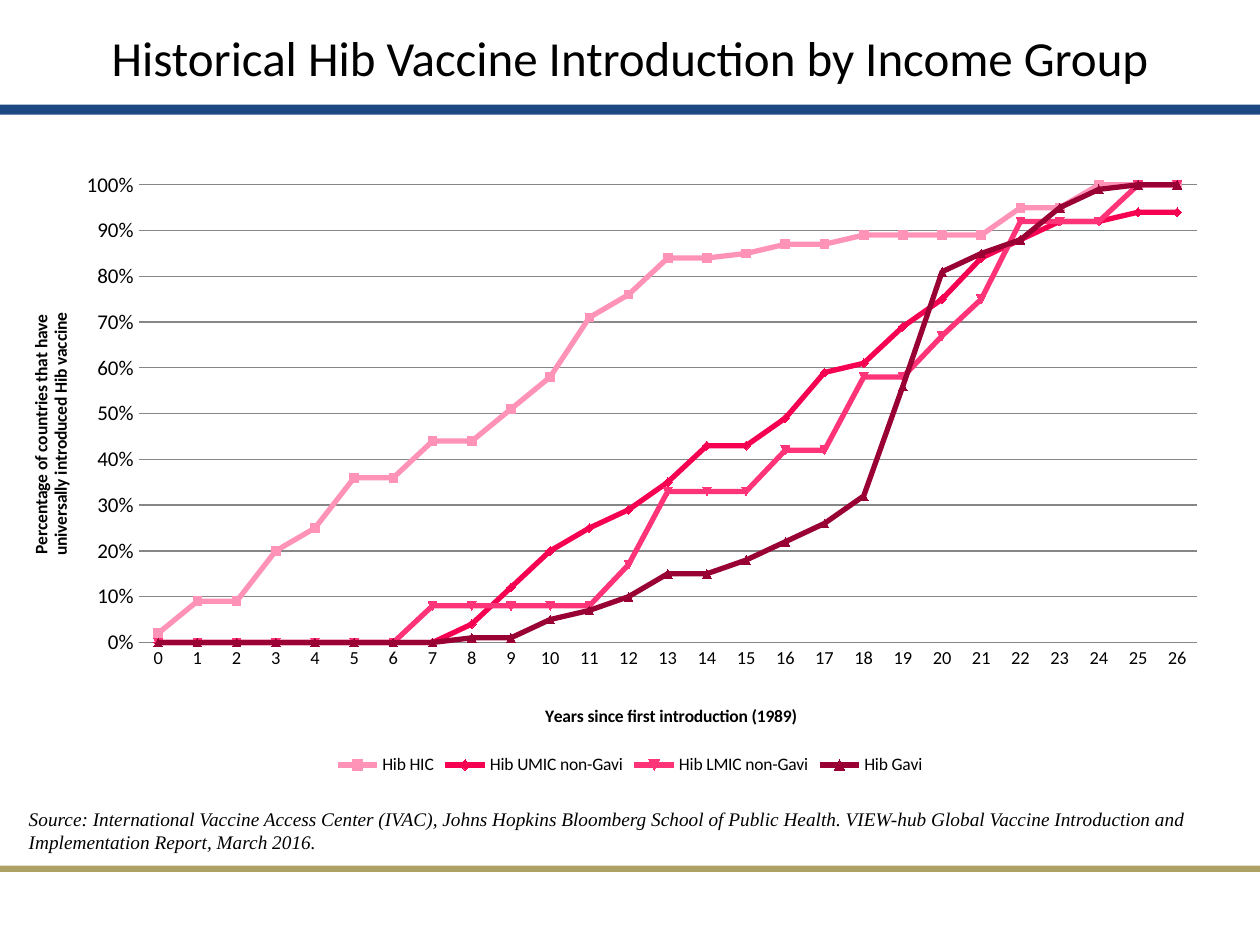
from lxml import etree
from pptx import Presentation
from pptx.chart.data import CategoryChartData
from pptx.dml.color import RGBColor
from pptx.enum.chart import XL_CHART_TYPE, XL_LEGEND_POSITION, XL_MARKER_STYLE, XL_TICK_MARK
from pptx.enum.shapes import MSO_SHAPE
from pptx.enum.text import MSO_ANCHOR, PP_ALIGN
from pptx.oxml.ns import qn
from pptx.util import Inches, Pt

LINE_MARKERS = XL_CHART_TYPE.LINE_MARKERS
LEGEND_BOTTOM = XL_LEGEND_POSITION.BOTTOM
AUTO_MARKER = XL_MARKER_STYLE.AUTOMATIC
NO_TICK = XL_TICK_MARK.NONE
RECTANGLE = MSO_SHAPE.RECTANGLE
MIDDLE = MSO_ANCHOR.MIDDLE
CENTER, LEFT = PP_ALIGN.CENTER, PP_ALIGN.LEFT

TITLE = "Historical Hib Vaccine Introduction by Income Group"
SOURCE = ("Source: International Vaccine Access Center (IVAC), Johns Hopkins Bloomberg School of "
          "Public Health. VIEW-hub Global Vaccine Introduction and Implementation Report, March 2016.")
YEARS_TITLE = "Years since first introduction (1989)"
SHARE_TITLE = "Percentage of countries that have\nuniversally introduced Hib vaccine"

# Name, colour, percentage of countries for each year since 1989
GROUPS = [
    ("Hib HIC", "FF93B7",
     [2, 9, 9, 20, 25, 36, 36, 44, 44, 51, 58, 71, 76, 84, 84, 85, 87, 87,
      89, 89, 89, 89, 95, 95, 100, 100, 100]),
    ("Hib UMIC non-Gavi", "F60052",
     [0, 0, 0, 0, 0, 0, 0, 0, 4, 12, 20, 25, 29, 35, 43, 43, 49, 59,
      61, 69, 75, 84, 88, 92, 92, 94, 94]),
    ("Hib LMIC non-Gavi", "FF3377",
     [0, 0, 0, 0, 0, 0, 0, 8, 8, 8, 8, 8, 17, 33, 33, 33, 42, 42,
      58, 58, 67, 75, 92, 92, 92, 100, 100]),
    ("Hib Gavi", "990033",
     [0, 0, 0, 0, 0, 0, 0, 0, 1, 1, 5, 7, 10, 15, 15, 18, 22, 26,
      32, 56, 81, 85, 88, 95, 99, 100, 100]),
]

THEME = {
    "text": "000000", "blue": "1C4982", "gold": "847013", "grid": "868686",
    "sans": "Calibri", "serif": "Times New Roman",
    "title": 28, "source": 11, "chart": 10, "years": 10.5, "share": 12,
}


def rgb(value):
    return RGBColor.from_string(value)


def set_font(font, size, name=THEME["sans"], bold=False, italic=False):
    font.name, font.size = name, Pt(size)
    font.bold, font.italic = bold, italic
    font.color.rgb = rgb(THEME["text"])


def add_band(slide, top, height, color, opacity=100):
    band = slide.shapes.add_shape(RECTANGLE, 0, Inches(top), Inches(10), Inches(height))
    band.shadow.inherit = False
    band.fill.solid()
    band.fill.fore_color.rgb = rgb(color)
    band.line.fill.background()
    if opacity < 100:
        tint = band._element.spPr.find(".//" + qn("a:srgbClr"))
        etree.SubElement(tint, qn("a:alpha")).set("val", str(opacity * 1000))


def place(element, **settings):
    """Give a chart part a manual layout, in fractions of the chart."""
    for old in element.findall(qn("c:layout")):
        element.remove(old)
    layout = etree.Element(qn("c:layout"))
    manual = etree.SubElement(layout, qn("c:manualLayout"))
    for tag, value in settings.items():
        etree.SubElement(manual, qn("c:" + tag)).set("val", str(value))
    text = element.find(qn("c:tx"))
    element.insert(0 if text is None else 1, layout)


def title_axis(axis, text, x, y):
    frame = axis.axis_title.text_frame
    frame.text = text
    for para in frame.paragraphs:
        para.alignment = LEFT
        set_font(para.font, THEME["chart"], bold=True)
    place(axis.axis_title._element, xMode="edge", yMode="edge", x=x, y=y)
    return frame


def add_vaccine_chart(slide):
    data = CategoryChartData(number_format="0%")
    data.categories = [str(year) for year in range(len(GROUPS[0][2]))]
    for name, _, percents in GROUPS:
        data.add_series(name, [percent / 100 for percent in percents])
    chart = slide.shapes.add_chart(
        LINE_MARKERS, 0, Inches(1), Inches(10), Inches(5.19), data).chart
    set_font(chart.font, THEME["chart"])
    chart.has_title = False
    chart.has_legend = True
    chart.legend.position = LEGEND_BOTTOM
    chart.legend.include_in_layout = False
    set_font(chart.legend.font, THEME["chart"])
    chart.plots[0].vary_by_categories = False
    place(chart._chartSpace.chart.plotArea, layoutTarget="inner", xMode="edge",
          yMode="edge", x=0.11, y=0.09, w=0.84, h=0.7)

    for series, (_, color, _) in zip(chart.plots[0].series, GROUPS):
        series.smooth = False
        series.format.line.color.rgb = rgb(color)
        series.format.line.width = Pt(3)
        marker = series.marker
        marker.style, marker.size = AUTO_MARKER, 5
        marker.format.fill.solid()
        marker.format.fill.fore_color.rgb = rgb(color)
        marker.format.line.color.rgb = rgb(color)

    years, share = chart.category_axis, chart.value_axis
    for axis, size in ((years, THEME["years"]), (share, THEME["share"])):
        axis.major_tick_mark = axis.minor_tick_mark = NO_TICK
        set_font(axis.tick_labels.font, size)
    years.format.line.color.rgb = rgb(THEME["grid"])
    share.format.line.fill.background()
    share.minimum_scale, share.maximum_scale, share.major_unit = 0, 1, 0.1
    share.tick_labels.number_format = "0%"
    share.tick_labels.number_format_is_linked = False
    share.major_gridlines.format.line.color.rgb = rgb(THEME["grid"])
    share.major_gridlines.format.line.width = Pt(0.75)
    title_axis(years, YEARS_TITLE, 0.43, 0.88)
    upright = title_axis(share, SHARE_TITLE, 0.02, 0.28)
    body = upright._txBody.bodyPr
    body.set("rot", "-5400000")
    body.set("vert", "horz")


def main():
    deck = Presentation()
    deck.slide_width, deck.slide_height = Inches(10), Inches(7.5)
    slide = deck.slides.add_slide(deck.slide_layouts[5])
    add_band(slide, 0.83, 0.08, THEME["blue"])
    add_band(slide, 6.87, 0.05, THEME["gold"], opacity=65)

    title = slide.shapes.title
    title.left, title.top, title.width, title.height = 0, Inches(0.1), Inches(10), Inches(0.71)
    title.text_frame.text = TITLE
    title.text_frame.vertical_anchor = MIDDLE
    title.text_frame.paragraphs[0].alignment = CENTER
    set_font(title.text_frame.paragraphs[0].font, THEME["title"])

    source = slide.shapes.add_textbox(Inches(0.13), Inches(6.36), Inches(9.74), Inches(0.47))
    source.text_frame.word_wrap = True
    source.text_frame.text = SOURCE
    set_font(source.text_frame.paragraphs[0].font, THEME["source"], THEME["serif"], italic=True)

    add_vaccine_chart(slide)
    deck.save("out.pptx")


if __name__ == "__main__":
    main()
